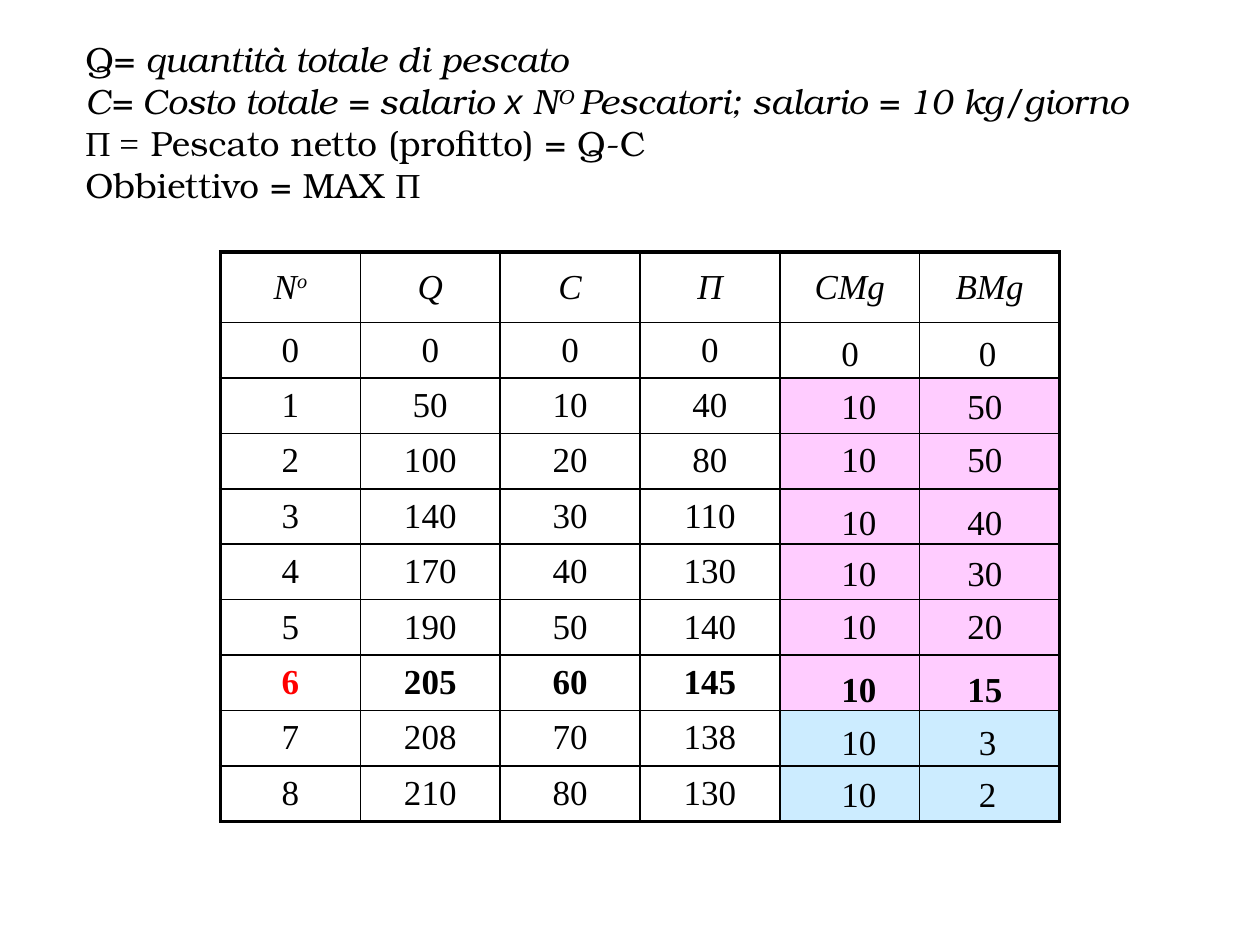
from lxml import etree
from pptx import Presentation
from pptx.dml.color import RGBColor
from pptx.enum.text import MSO_ANCHOR, MSO_AUTO_SIZE, PP_ALIGN
from pptx.oxml.ns import qn
from pptx.util import Inches, Pt

CENTER = PP_ALIGN.CENTER
MIDDLE = MSO_ANCHOR.MIDDLE
GROW = MSO_AUTO_SIZE.SHAPE_TO_FIT_TEXT
COLORS = {"ink": "000000", "best": "FF0000", "gain": "FFCCFF", "loss": "CCECFF"}
SERIF, BOOK, SANS = "Times New Roman", "TeX Gyre Bonum", "Arial"
THIN, THICK = 1, 2.25
BEST_WORKERS = 6

DEFINITIONS = [
    [("Q=", BOOK, ""), (" quantità totale di pescato", BOOK, "i")],
    [
        ("C= Costo totale = salario ", BOOK, "i"),
        ("x", SANS, "i"),
        (" N", BOOK, "i"),
        ("O ", BOOK, "i^"),
        ("Pescatori; salario = 10 kg/giorno", BOOK, "i"),
    ],
    [("Π =", SERIF, ""), (" Pescato netto (profitto) = Q-C", BOOK, "")],
    [("Obbiettivo = MAX ", BOOK, ""), ("Π", SERIF, "")],
]
HEADERS = ["No", "Q", "C", "Π", "CMg", "BMg"]
CATCH = [
    (0, 0, 0, 0),
    (1, 50, 10, 40),
    (2, 100, 20, 80),
    (3, 140, 30, 110),
    (4, 170, 40, 130),
    (5, 190, 50, 140),
    (6, 205, 60, 145),
    (7, 208, 70, 138),
    (8, 210, 80, 130),
]
MARGINS = [
    (2.58, 0, 0),
    (3, 10, 50),
    (3.42, 10, 50),
    (3.92, 10, 40),
    (4.33, 10, 30),
    (4.75, 10, 20),
    (5.25, 10, 15),
    (5.67, 10, 3),
    (6.08, 10, 2),
]


class SlideBuilder:
    """Draws styled text and tables on the current slide."""

    def __init__(self, page, size=20):
        self.page = page
        self.size = Pt(size)

    def style(self, font, name=SERIF, color="ink", bold=False, italic=False):
        font.name, font.size = name, self.size
        font.bold, font.italic = bold, italic
        font.color.rgb = RGBColor.from_string(COLORS[color])

    def raise_text(self, span):
        span.font._element.set("baseline", "30000")

    def box(self, left, top, width, height, wrap=True):
        frame = self.page.shapes.add_textbox(
            Inches(left), Inches(top), Inches(width), Inches(height)
        ).text_frame
        frame.word_wrap = wrap
        frame.auto_size = GROW
        return frame

    def rich_text(self, left, top, width, height, lines):
        frame = self.box(left, top, width, height, wrap=False)
        for index, line in enumerate(lines):
            para = frame.add_paragraph() if index else frame.paragraphs[0]
            for text, name, marks in line:
                span = para.add_run()
                span.text = text
                self.style(span.font, name, italic="i" in marks)
                if "^" in marks:
                    self.raise_text(span)

    def number(self, left, top, value, bold):
        para = self.box(left, top, 0.5, 0.43).paragraphs[0]
        para.text = str(value)
        self.style(para.font, bold=bold)

    def table(self, left, top, column_width, row_heights, columns):
        rows = len(row_heights)
        table = self.page.shapes.add_table(
            rows, columns, Inches(left), Inches(top),
            Inches(column_width * columns), Inches(sum(row_heights)),
        ).table
        table.first_row = table.horz_banding = False
        for column in table.columns:
            column.width = Inches(column_width)
        for row, height in zip(table.rows, row_heights):
            row.height = Inches(height)
        for r in range(rows):
            for c in range(columns):
                outer = {"L": c == 0, "R": c == columns - 1, "T": r == 0, "B": r == rows - 1}
                self.borders(table.cell(r, c), outer)
        return table

    def borders(self, cell, outer):
        properties = cell._tc.get_or_add_tcPr()
        for side, is_outer in outer.items():
            width = Pt(THICK if is_outer else THIN)
            line = etree.SubElement(properties, qn(f"a:ln{side}"), w=str(width))
            fill = etree.SubElement(line, qn("a:solidFill"))
            etree.SubElement(fill, qn("a:srgbClr"), val=COLORS["ink"])

    def fill(self, cell, color=None):
        if color:
            cell.fill.solid()
            cell.fill.fore_color.rgb = RGBColor.from_string(COLORS[color])
        else:
            cell.fill.background()

    def cell_text(self, cell, *texts, **look):
        cell.vertical_anchor = MIDDLE
        para = cell.text_frame.paragraphs[0]
        para.alignment = CENTER
        self.style(para.font, **look)
        for text in texts:
            span = para.add_run()
            span.text = text
            self.style(span.font, **look)
        return para


def fill_color(row, column):
    if column < 4 or row < 2:
        return None
    return "gain" if row - 1 <= BEST_WORKERS else "loss"


def main():
    deck = Presentation()
    deck.slide_width, deck.slide_height = Inches(10), Inches(7.5)
    builder = SlideBuilder(deck.slides.add_slide(deck.slide_layouts[6]))

    heights = [0.56] + [0.44] * len(CATCH)
    table = builder.table(1.75, 2, 1.11, heights, len(HEADERS))
    for r in range(len(heights)):
        for c in range(len(HEADERS)):
            builder.fill(table.cell(r, c), fill_color(r, c))
    for c, header in enumerate(HEADERS):
        texts = header if c == 0 else [header]
        para = builder.cell_text(table.cell(0, c), *texts, italic=True)
        if c == 0:
            builder.raise_text(para.runs[1])
    for r, values in enumerate(CATCH, start=1):
        best = values[0] == BEST_WORKERS
        for c, value in enumerate(values):
            color = "best" if best and c == 0 else "ink"
            builder.cell_text(table.cell(r, c), str(value), color=color, bold=best)

    builder.rich_text(0.58, 0.25, 8.5, 1.43, DEFINITIONS)
    for workers, (top, cost, benefit) in enumerate(MARGINS):
        best = workers == BEST_WORKERS
        builder.number(6.58, top, cost, best)
        builder.number(7.67 if benefit < 10 else 7.58, top, benefit, best)

    deck.save("out.pptx")


if __name__ == "__main__":
    main()
